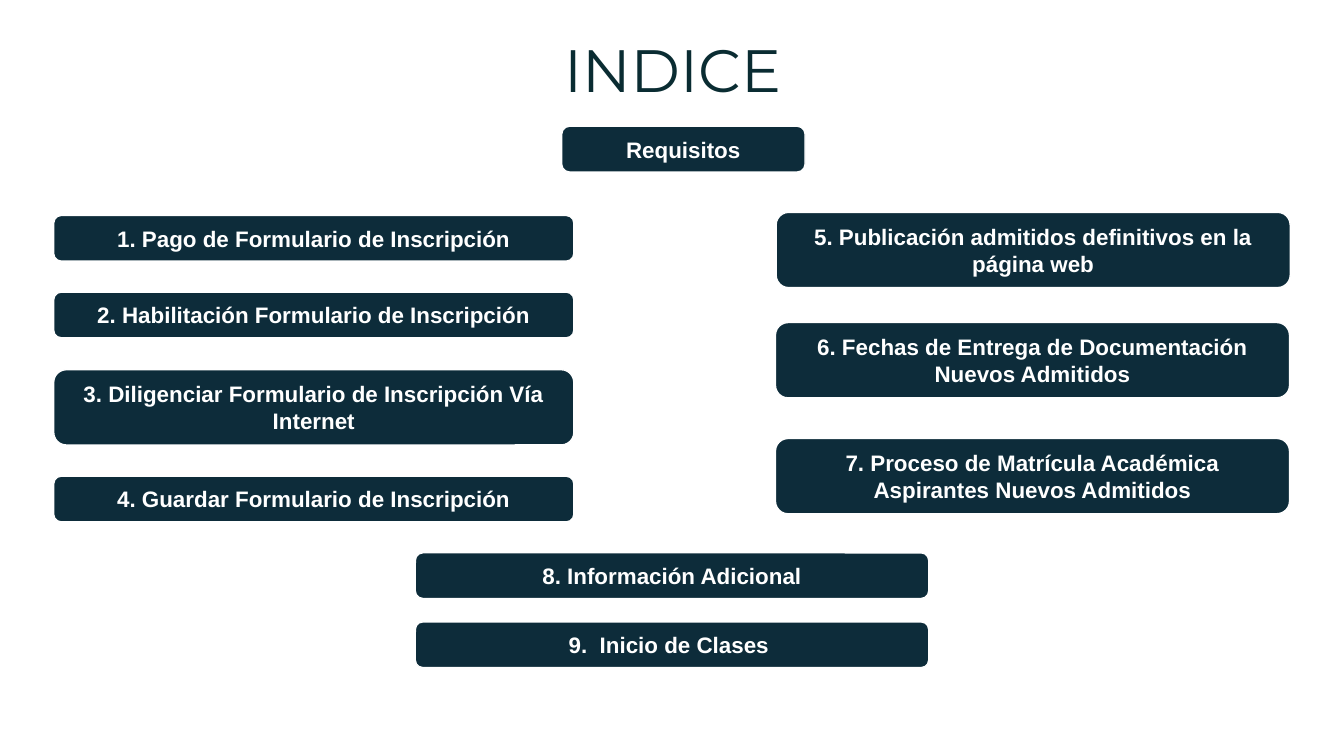
from dataclasses import dataclass

from pptx import Presentation
from pptx.dml.color import RGBColor
from pptx.enum.shapes import MSO_SHAPE
from pptx.enum.text import MSO_ANCHOR, MSO_AUTO_SIZE, PP_ALIGN
from pptx.slide import Slide
from pptx.text.text import TextFrame
from pptx.util import Inches, Pt

ROUNDED = MSO_SHAPE.ROUNDED_RECTANGLE
CENTER = PP_ALIGN.CENTER
TOP, MIDDLE = MSO_ANCHOR.TOP, MSO_ANCHOR.MIDDLE
NO_FIT, GROW = MSO_AUTO_SIZE.NONE, MSO_AUTO_SIZE.SHAPE_TO_FIT_TEXT

COLORS = {"title": "0A2C32", "step": "0D2C3A", "white": "FFFFFF"}
SLIDE_WIDTH = Inches(10)
SLIDE_HEIGHT = SLIDE_WIDTH * 9 // 16
# Step heights by number of text lines, in percent of the slide height
STEP_HEIGHT = {1: 6.04, 2: 9.96}


@dataclass
class Step:
    """One index entry; top in percent of the slide height."""
    top: float
    label: str
    lines: int = 1


@dataclass
class Stack:
    """Steps sharing a column; lengths in percent of the slide width."""
    left: float
    width: float
    steps: list[Step]


STACKS = [
    Stack(4, 38.7, [
        Step(28.5, "1. Pago de Formulario de Inscripción"),
        Step(38.64, "2. Habilitación Formulario de Inscripción"),
        Step(48.9, "3. Diligenciar Formulario de Inscripción Vía Internet", 2),
        Step(62.99, "4. Guardar Formulario de Inscripción"),
    ]),
    Stack(57.75, 38.25, [
        Step(28.09, "5. Publicación admitidos definitivos en la página web", 2),
    ]),
    Stack(41.8, 18.1, [Step(16.71, "Requisitos")]),
    Stack(57.7, 38.25, [
        Step(42.67, "6. Fechas de Entrega de Documentación Nuevos Admitidos", 2),
        Step(58, "7. Proceso de Matrícula Académica Aspirantes Nuevos Admitidos",
             2),
    ]),
    Stack(30.9, 38.2, [
        Step(73.13, "8. Información Adicional"),
        Step(82.27, "9.  Inicio de Clases "),
    ]),
]


def color(name: str) -> RGBColor:
    return RGBColor.from_string(COLORS[name])


def across(percent: float) -> int:
    return round(SLIDE_WIDTH * percent / 100)


def down(percent: float) -> int:
    return round(SLIDE_HEIGHT * percent / 100)


def write(frame: TextFrame, label: str, font: str, size: int,
          ink: str, bold: bool) -> None:
    frame.word_wrap = True
    paragraph = frame.paragraphs[0]
    paragraph.alignment = CENTER
    run = paragraph.add_run()
    run.text = label
    run.font.name = font
    run.font.size = Pt(size)
    run.font.bold = bold
    run.font.color.rgb = color(ink)


def draw_title(slide: Slide, label: str) -> None:
    title = slide.shapes.title
    title.left, title.top = across(20.7), down(3.38)
    title.width, title.height = across(58.7), down(13.7)
    title.text_frame.vertical_anchor = TOP
    title.text_frame.auto_size = NO_FIT
    write(title.text_frame, label, "Montserrat", 32, "title", False)


def draw_step(slide: Slide, stack: Stack, step: Step) -> None:
    box = slide.shapes.add_shape(ROUNDED, across(stack.left), down(step.top),
                                 across(stack.width),
                                 down(STEP_HEIGHT[step.lines]))
    box.shadow.inherit = False
    box.fill.solid()
    box.fill.fore_color.rgb = color("step")
    box.line.color.rgb = color("white")
    box.line.width = Pt(0.75)
    box.text_frame.vertical_anchor = MIDDLE
    box.text_frame.auto_size = GROW
    write(box.text_frame, step.label, "Arial", 12, "white", True)


def main() -> None:
    deck = Presentation()
    deck.slide_width, deck.slide_height = SLIDE_WIDTH, SLIDE_HEIGHT
    title_only = deck.slide_layouts[5]
    slide = deck.slides.add_slide(title_only)
    draw_title(slide, "INDICE")
    for stack in STACKS:
        for step in stack.steps:
            draw_step(slide, stack, step)
    deck.save("out.pptx")


if __name__ == "__main__":
    main()
